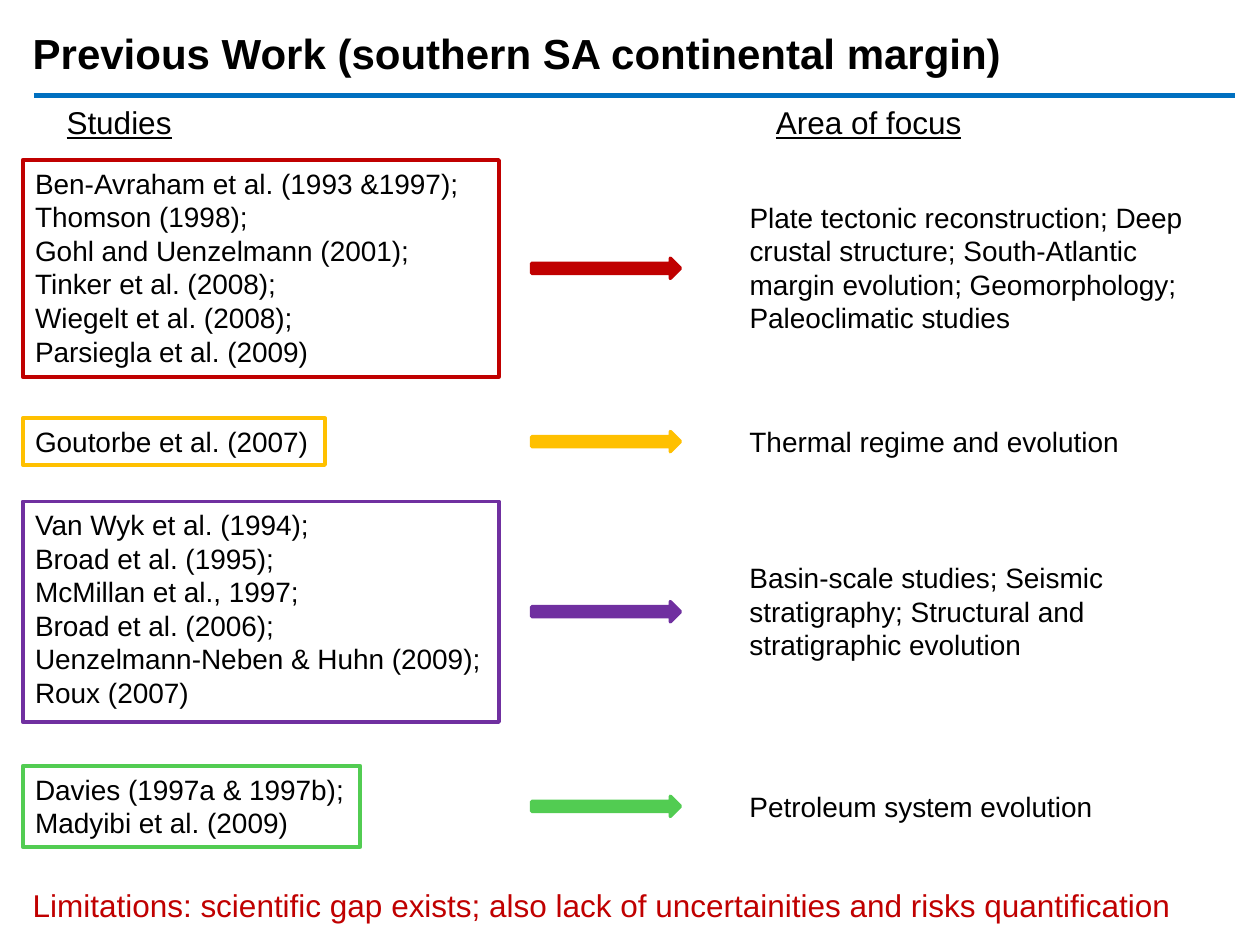
from pptx import Presentation
from pptx.dml.color import RGBColor
from pptx.enum.shapes import MSO_CONNECTOR as Connector, MSO_SHAPE as Shape
from pptx.enum.text import MSO_ANCHOR as Anchor, PP_ALIGN as Align
from pptx.oxml.ns import qn
from pptx.util import Inches, Pt
from lxml.etree import SubElement

COLORS = {
    "text": "000000", "rule": "0070C0", "red": "C00000",
    "yellow": "FFC000", "purple": "7030A0", "green": "52CC52",
}

# Column edges and sizes, in inches
MARGIN, STUDY_X, ARROW_X, FOCUS_X, RIGHT = 0.16, 0.18, 4.22, 5.85, 9.8
ARROW_W, ARROW_H = 1.18, 0.16
LINE_H, PADDING = 0.27, 0.1

# Colour, top, width and height of the box, studies, focus, its width and line count
ROWS = [
    ("red", 1.27, 3.78, 1.72,
     ["Ben-Avraham et al. (1993 &1997);", "Thomson (1998);",
      "Gohl and Uenzelmann (2001);", "Tinker et al. (2008);",
      "Wiegelt et al. (2008);", "Parsiegla et al. (2009)"],
     "Plate tectonic reconstruction; Deep crustal structure; South-Atlantic "
     "margin evolution; Geomorphology; Paleoclimatic studies", 3.95, 4),
    ("yellow", 3.32, 2.4, 0.37, ["Goutorbe et al. (2007)"],
     "Thermal regime and evolution", 3.17, 1),
    ("purple", 3.98, 3.78, 1.75,
     ["Van Wyk et al. (1994);", "Broad et al. (1995);",
      "McMillan et al., 1997;", "Broad et al. (2006);",
      "Uenzelmann-Neben & Huhn (2009);", "Roux (2007)"],
     "Basin-scale studies; Seismic stratigraphy; Structural and "
     "stratigraphic evolution", 3.93, 3),
    ("green", 6.08, 2.68, 0.64,
     ["Davies (1997a & 1997b);", "Madyibi et al. (2009)"],
     "Petroleum system evolution", 2.96, 1),
]


def rgb(name):
    return RGBColor.from_string(COLORS[name])


def inches(*lengths):
    return [Inches(length) for length in lengths]


def write(frame, lines, size, color="text", wrap=True, bold=False, underline=False):
    frame.word_wrap = wrap
    frame.vertical_anchor = Anchor.TOP
    for index, line in enumerate(lines):
        paragraph = frame.paragraphs[0] if index == 0 else frame.add_paragraph()
        paragraph.text = line
        paragraph.alignment = Align.LEFT
        font = paragraph.font
        font.name, font.size, font.bold = "Arial", Pt(size), bold
        font.underline = underline
        font.color.rgb = rgb(color)


def add_label(slide, place, text, size, **style):
    label = slide.shapes.add_textbox(*inches(*place))
    write(label.text_frame, [text], size, **style)


def add_title(slide, text):
    title = slide.shapes.title
    title.left, title.top, title.width, title.height = inches(MARGIN, 0.17, 8.13, 0.5)
    write(title.text_frame, [text], 24, wrap=False, bold=True)


def add_rule(slide, y):
    rule = slide.shapes.add_connector(
        Connector.STRAIGHT, *inches(0.27, y, RIGHT, y))
    rule.line.color.rgb = rgb("rule")
    rule.line.width = Pt(3)
    SubElement(rule._element.spPr, qn("a:effectLst"))


def add_outlined(slide, kind, place, color, width):
    shape = slide.shapes.add_shape(kind, *inches(*place))
    shape.shadow.inherit = False
    shape.line.color.rgb = rgb(color)
    shape.line.width = Pt(width)
    return shape


def add_row(slide, color, top, width, height, studies, focus, focus_w, focus_lines):
    middle = top + height / 2

    # Studies
    box = add_outlined(slide, Shape.RECTANGLE, (STUDY_X, top, width, height), color, 2.25)
    box.fill.background()
    write(box.text_frame, studies, 16, wrap=False)

    # Arrow
    arrow = add_outlined(slide, Shape.RIGHT_ARROW,
                         (ARROW_X, middle - ARROW_H / 2, ARROW_W, ARROW_H), color, 2)
    arrow.fill.solid()
    arrow.fill.fore_color.rgb = rgb(color)

    # Area of focus
    focus_h = focus_lines * LINE_H + PADDING
    add_label(slide, (FOCUS_X, middle - focus_h / 2, focus_w, focus_h), focus, 16,
              wrap=focus_lines > 1)


def main():
    prs = Presentation()
    prs.slide_width, prs.slide_height = inches(10, 7.5)
    slide = prs.slides.add_slide(prs.slide_layouts.get_by_name("Title Only"))

    # Heading
    add_title(slide, "Previous Work (southern SA continental margin)")
    add_rule(slide, 0.76)
    add_label(slide, (0.43, 0.77, 1.16, 0.4), "Studies", 18, underline=True)
    add_label(slide, (6.06, 0.77, 3.74, 0.4), "Area of focus", 18, underline=True)

    # Studies and what they focus on
    for row in ROWS:
        add_row(slide, *row)

    # Conclusion
    add_label(slide, (MARGIN, 6.98, 9.25, 0.4),
              "Limitations: scientific gap exists; also lack of uncertainities "
              "and risks quantification", 18, color="red", wrap=False)

    prs.save("out.pptx")


if __name__ == "__main__":
    main()
